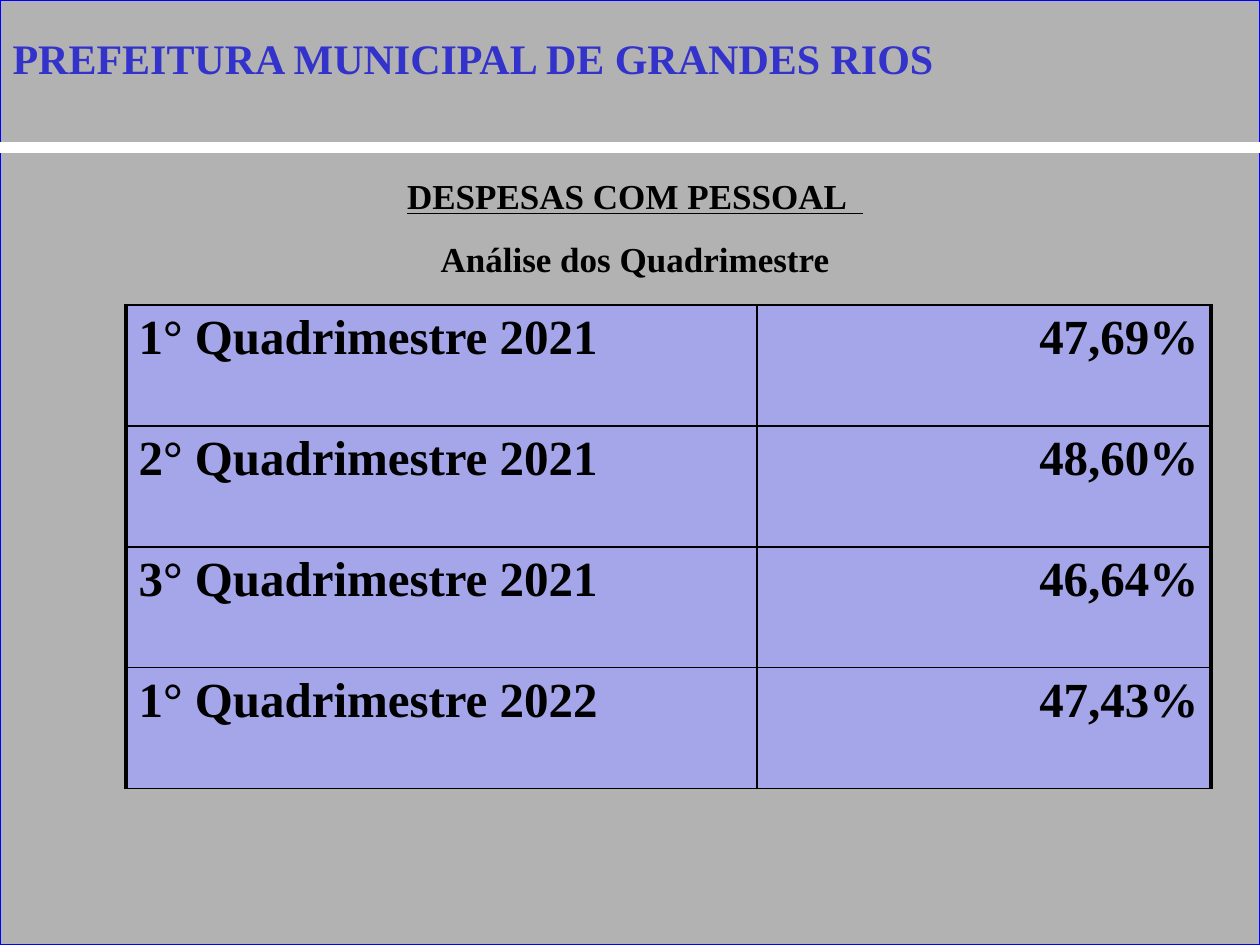
from lxml.etree import SubElement
from pptx import Presentation
from pptx.dml.color import RGBColor
from pptx.enum.shapes import MSO_CONNECTOR, MSO_SHAPE
from pptx.enum.text import MSO_ANCHOR, MSO_AUTO_SIZE, PP_ALIGN
from pptx.oxml import parse_xml
from pptx.oxml.ns import nsdecls, qn
from pptx.util import Inches, Pt

BLACK = RGBColor(0x00, 0x00, 0x00)
WHITE = RGBColor(0xFF, 0xFF, 0xFF)
GRAY = RGBColor(0xB2, 0xB2, 0xB2)
BLUE = RGBColor(0x00, 0x00, 0xFF)
TITLE_BLUE = RGBColor(0x33, 0x33, 0xCC)
LILAC = RGBColor(0xA5, 0xA5, 0xE9)

QUARTERS = [
    ("1° Quadrimestre 2021", "47,69%"),
    ("2° Quadrimestre 2021", "48,60%"),
    ("3° Quadrimestre 2021", "46,64%"),
    ("1° Quadrimestre 2022", "47,43%"),
]


class SlideBuilder:
    font_name = "Times New Roman"

    def __init__(self, slide):
        self.slide = slide
        self.shapes = slide.shapes

    def format(self, para, size, color=BLACK, align=PP_ALIGN.LEFT, underline=False):
        para.alignment = align
        for span in para.runs:
            font = span.font
            font.name = self.font_name
            font.size = Pt(size)
            font.bold = True
            font.underline = underline
            font.color.rgb = color

    def background(self, width, height):
        panel = self.shapes.add_shape(MSO_SHAPE.RECTANGLE, 0, 0, width, height)
        panel.shadow.inherit = False
        panel.fill.solid()
        panel.fill.fore_color.rgb = GRAY
        panel.line.color.rgb = BLUE
        panel.line.width = Pt(0.75)

    def rule(self, top, width):
        rule = self.shapes.add_connector(MSO_CONNECTOR.STRAIGHT, 0, top, width, top)
        rule.line.color.rgb = WHITE
        rule.line.width = Pt(6)
        SubElement(rule._element.spPr, qn("a:effectLst"))

    def title(self, text, left, top, width, height):
        title = self.shapes.title
        title.left, title.top, title.width, title.height = left, top, width, height
        frame = title.text_frame
        frame.text = text
        frame.word_wrap = True
        frame.auto_size = MSO_AUTO_SIZE.NONE
        frame.vertical_anchor = MSO_ANCHOR.TOP
        para = frame.paragraphs[0]
        self.format(para, 24, TITLE_BLUE)
        shadow = parse_xml(
            f'<a:effectLst {nsdecls("a")}>'
            '<a:outerShdw dist="35921" dir="2700000" algn="ctr">'
            '<a:srgbClr val="808080"/></a:outerShdw></a:effectLst>'
        )
        para.runs[0].font._element.find(qn("a:solidFill")).addnext(shadow)
        self.shapes._spTree.append(title._element)

    def headings(self, lines, left, top, width, height):
        box = self.shapes.add_textbox(left, top, width, height)
        frame = box.text_frame
        frame.word_wrap = True
        frame.text = "\n".join(lines)
        for index, para in enumerate(frame.paragraphs):
            self.format(para, 20, align=PP_ALIGN.CENTER, underline=index == 0)
            para.line_spacing = 1.5

    def borders(self, cell, left_width, right_width):
        properties = cell._tc.get_or_add_tcPr()
        sides = (("lnL", left_width), ("lnR", right_width), ("lnT", 1), ("lnB", 1))
        for position, (side, width) in enumerate(sides):
            border = parse_xml(
                f'<a:{side} {nsdecls("a")} w="{Pt(width)}">'
                f'<a:solidFill><a:srgbClr val="{BLACK}"/></a:solidFill></a:{side}>'
            )
            properties.insert(position, border)

    def table(self, rows, left, top, column_widths, row_height):
        table = self.shapes.add_table(
            len(rows), len(column_widths), left, top,
            sum(column_widths), row_height * len(rows),
        ).table
        table.first_row = False
        table.horz_banding = False
        for column, width in zip(table.columns, column_widths):
            column.width = width
        styles = ((PP_ALIGN.LEFT, 2.25, 1), (PP_ALIGN.RIGHT, 1, 2.25))
        for row, values in zip(table.rows, rows):
            row.height = row_height
            for cell, value, (align, left_width, right_width) in zip(row.cells, values, styles):
                cell.text = value
                cell.fill.solid()
                cell.fill.fore_color.rgb = LILAC
                self.format(cell.text_frame.paragraphs[0], 28, align=align)
                self.borders(cell, left_width, right_width)


def main():
    deck = Presentation()
    deck.slide_width = Inches(10)
    deck.slide_height = Inches(7.5)
    builder = SlideBuilder(deck.slides.add_slide(deck.slide_layouts[5]))
    builder.background(deck.slide_width, deck.slide_height)
    builder.rule(Inches(1.17), deck.slide_width)
    builder.headings(
        ["DESPESAS COM PESSOAL  ", "Análise dos Quadrimestre"],
        Inches(0.58), Inches(1.17), Inches(8.92), Inches(5.11),
    )
    builder.table(
        QUARTERS, Inches(1), Inches(2.42), (Inches(5.01), Inches(3.6)), Inches(0.96)
    )
    builder.title(
        "PREFEITURA MUNICIPAL DE GRANDES RIOS",
        0, Inches(0.21), Inches(9.49), Inches(0.5),
    )
    deck.save("out.pptx")


if __name__ == "__main__":
    main()
